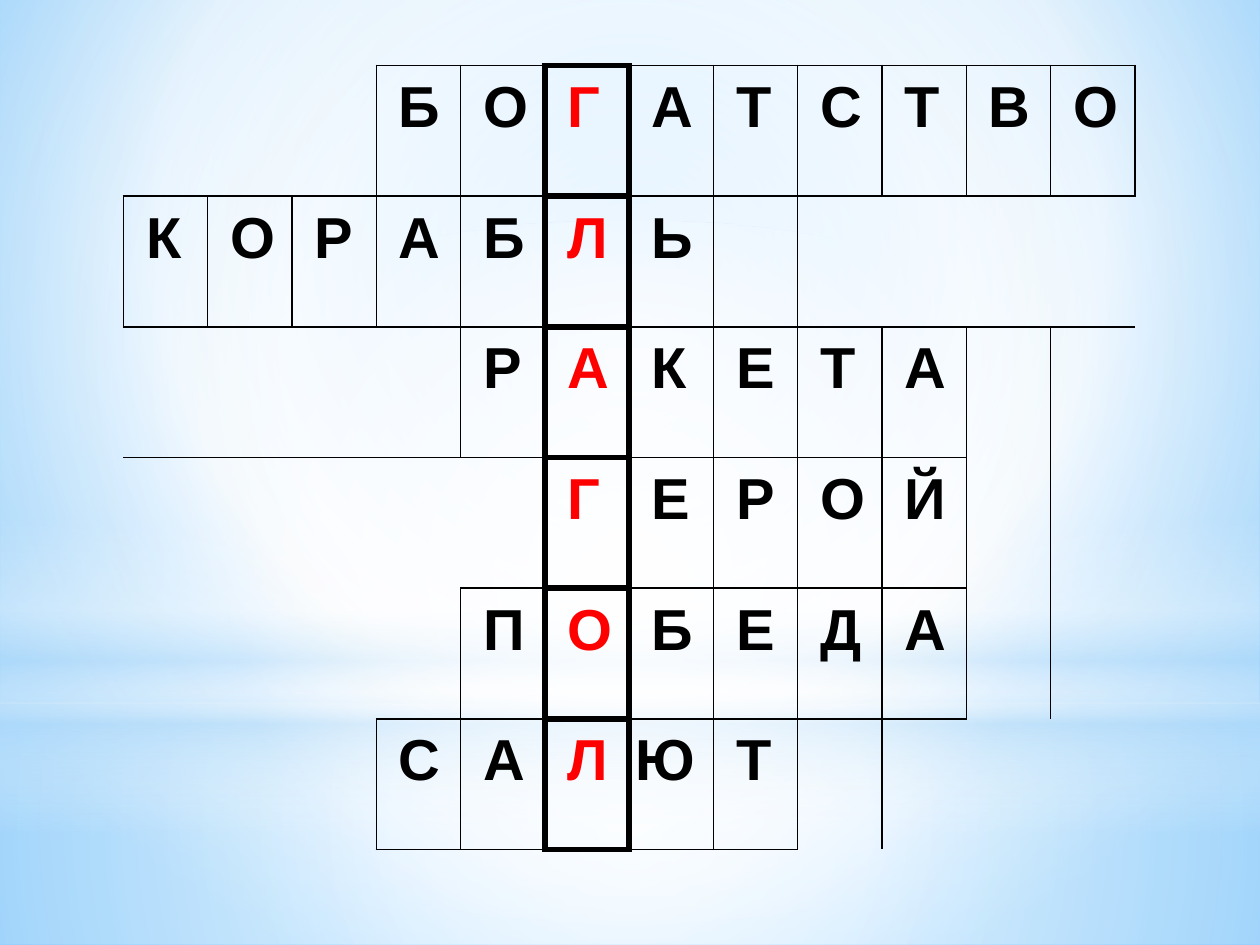
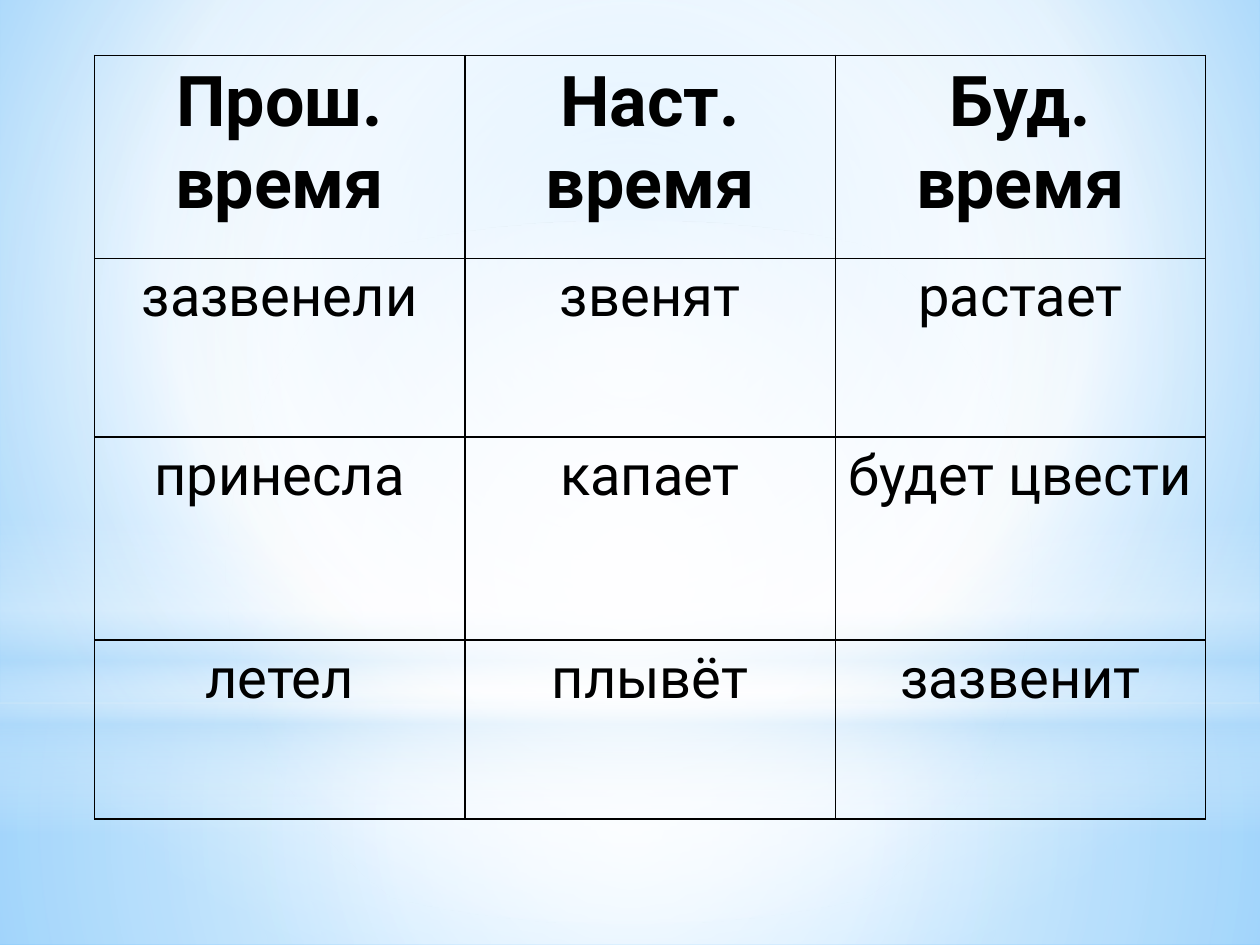
from dataclasses import dataclass
from itertools import product

from lxml.etree import SubElement
from pptx import Presentation
from pptx.dml.color import RGBColor
from pptx.enum.shapes import MSO_SHAPE
from pptx.enum.text import PP_ALIGN
from pptx.oxml.ns import qn
from pptx.util import Inches, Pt

SLIDE_WIDTH, SLIDE_HEIGHT = Inches(10), Inches(7.5)
BLACK, RED, WHITE, PALE_BLUE = "000000", "FF0000", "FFFFFF", "B4DCFA"
THIN, THICK = 1, 3.75
NO_TABLE_STYLE = "{2D5ABB26-0587-4C30-8999-92F81FD0307C}"
CENTER = (50, 50, 50, 50)

KEYWORD = "ГЛАГОЛ"
KEYWORD_COLUMN = 5
CROSSWORD_COLUMNS = 12
CROSSWORD_WORDS = ("БОГАТСТВО", "КОРАБЛЬ", "РАКЕТА", "ГЕРОЙ", "ПОБЕДА", "САЛЮТ")
WIDE_LETTER = "Ю"

TENSES = (
    ("Прош. время", "Наст. время", "Буд. время"),
    ("зазвенели", "звенят", "растает"),
    ("принесла", "капает", "будет цвести"),
    ("летел", "плывёт", "зазвенит"),
)


@dataclass(frozen=True)
class Stop:
    position: int
    color: str
    opacity: int = 100


@dataclass(frozen=True)
class Gradient:
    stops: tuple[Stop, ...]
    focus: tuple[int, int, int, int] | None = CENTER


@dataclass(frozen=True)
class Band:
    kind: MSO_SHAPE
    top: float
    height: float
    gradient: Gradient


@dataclass(frozen=True)
class Grid:
    left: float
    top: float
    column_width: float
    row_heights: tuple[float, ...]
    columns: int


BACKDROP = Gradient(
    (Stop(0, "9ED5FF"), Stop(60, WHITE), Stop(100, "5BB9FF")), (20, 10, 20, 60)
)
BANDS = (
    Band(MSO_SHAPE.RECTANGLE, 74.4, 25.6, Gradient(
        (Stop(0, WHITE, 91), Stop(37, WHITE, 76), Stop(100, PALE_BLUE, 79)))),
    Band(MSO_SHAPE.RECTANGLE, 0, 74.4, Gradient(
        (Stop(0, WHITE, 89), Stop(48, WHITE, 62), Stop(100, PALE_BLUE, 79)))),
    Band(MSO_SHAPE.RECTANGLE, 54.93, 33.33, Gradient(
        (Stop(0, WHITE, 0), Stop(29, WHITE, 30), Stop(45, PALE_BLUE, 40),
         Stop(55, WHITE, 26), Stop(65, PALE_BLUE, 60), Stop(100, WHITE, 0)), None)),
    Band(MSO_SHAPE.OVAL, 23.33, 74.4, Gradient(
        (Stop(0, WHITE), Stop(56, WHITE, 0)))),
)
CROSSWORD_GRID = Grid(9.8, 6.93, 6.69, (13.83,) * len(KEYWORD), CROSSWORD_COLUMNS)
TENSE_GRID = Grid(7.5, 5.87, 29.4, (21.47, 18.93) * 2, 3)


def across(percent: float) -> int:
    return round(SLIDE_WIDTH * percent / 100)


def down(percent: float) -> int:
    return round(SLIDE_HEIGHT * percent / 100)


def rgb(color: str) -> RGBColor:
    return RGBColor.from_string(color)


def paint_gradient(fill, owner, gradient: Gradient) -> None:
    fill.gradient()
    element = next(owner.iter(qn("a:gradFill")))
    for child in list(element):
        element.remove(child)
    stop_list = SubElement(element, qn("a:gsLst"))
    for stop in gradient.stops:
        mark = SubElement(stop_list, qn("a:gs"), pos=str(stop.position * 1000))
        color = SubElement(mark, qn("a:srgbClr"), val=stop.color)
        if stop.opacity < 100:
            SubElement(color, qn("a:alpha"), val=str(stop.opacity * 1000))
    if gradient.focus is None:
        SubElement(element, qn("a:lin"), ang="5400000", scaled="0")
    else:
        path = SubElement(element, qn("a:path"), path="circle")
        sides = {side: str(share * 1000) for side, share in zip("ltrb", gradient.focus)}
        SubElement(path, qn("a:fillToRect"), **sides)


def decorate_layout(layout, slide) -> None:
    paint_gradient(layout.background.fill, layout.element, BACKDROP)
    for band in BANDS:
        shape = slide.shapes.add_shape(
            band.kind, 0, down(band.top), SLIDE_WIDTH, down(band.height)
        )
        shape.shadow.inherit = False
        shape.line.fill.background()
        paint_gradient(shape.fill, shape.element, band.gradient)
        layout.shapes.element.append(shape.element)


def add_grid(slide, grid: Grid):
    heights = [down(height) for height in grid.row_heights]
    width = across(grid.column_width)
    frame = slide.shapes.add_table(
        len(heights), grid.columns, across(grid.left), down(grid.top),
        width * grid.columns, sum(heights),
    )
    table = frame.table
    table.first_row = table.horz_banding = False
    next(frame.element.iter(qn("a:tableStyleId"))).text = NO_TABLE_STYLE
    for column in table.columns:
        column.width = width
    for row, height in zip(table.rows, heights):
        row.height = height
    return table


def format_cell(cell, borders: dict[str, float]) -> None:
    properties = cell._tc.get_or_add_tcPr()
    for side, weight in borders.items():
        if weight:
            line = SubElement(properties, qn(f"a:ln{side}"), w=str(Pt(weight)))
            fill = SubElement(line, qn("a:solidFill"))
            SubElement(fill, qn("a:srgbClr"), val=BLACK)
    cell.fill.background()


def write_text(cell, text: str, *, size: float, font: str, color: str = BLACK,
               bold: bool = False, align: PP_ALIGN = PP_ALIGN.LEFT,
               line_spacing: float = 1.0) -> None:
    paragraph = cell.text_frame.paragraphs[0]
    paragraph.alignment = align
    paragraph.line_spacing = line_spacing
    run = paragraph.add_run()
    run.text = text
    run.font.size = Pt(size)
    run.font.name = font
    run.font.bold = bold
    run.font.color.rgb = rgb(color)


def place_letters() -> dict[tuple[int, int], str]:
    letters = {}
    for row, (word, key) in enumerate(zip(CROSSWORD_WORDS, KEYWORD)):
        start = KEYWORD_COLUMN - word.index(key)
        for offset, letter in enumerate(word):
            letters[row, start + offset] = letter
    return letters


def build_crossword(slide) -> None:
    table = add_grid(slide, CROSSWORD_GRID)
    letters = place_letters()

    def weight(place: tuple[int, int]) -> float:
        if place not in letters:
            return 0
        return THICK if place[1] == KEYWORD_COLUMN else THIN

    for row, column in product(range(len(KEYWORD)), range(CROSSWORD_COLUMNS)):
        cell = table.cell(row, column)
        neighbours = {
            "L": (row, column - 1), "R": (row, column + 1),
            "T": (row - 1, column), "B": (row + 1, column),
        }
        own = weight((row, column))
        format_cell(cell, {side: max(own, weight(place))
                           for side, place in neighbours.items()})
        if not own:
            continue
        letter = letters[row, column]
        cell.margin_left = Inches(0.05 if letter == WIDE_LETTER else 0.18)
        cell.margin_right = Inches(0.05)
        cell.margin_top = cell.margin_bottom = 0
        write_text(cell, letter, size=33, font="Arial", bold=True, line_spacing=1.15,
                   color=RED if column == KEYWORD_COLUMN else BLACK)


def build_tenses(slide) -> None:
    table = add_grid(slide, TENSE_GRID)
    for row, words in enumerate(TENSES):
        heading = row == 0
        for column, word in enumerate(words):
            cell = table.cell(row, column)
            format_cell(cell, dict.fromkeys("LRTB", THIN))
            write_text(cell, word, size=40 if heading else 32, font="Roboto",
                       bold=heading, align=PP_ALIGN.CENTER)


def main() -> None:
    presentation = Presentation()
    presentation.slide_width, presentation.slide_height = SLIDE_WIDTH, SLIDE_HEIGHT
    layout = presentation.slide_layouts[6]
    crossword_slide, tense_slide = (
        presentation.slides.add_slide(layout) for _ in range(2)
    )
    decorate_layout(layout, crossword_slide)
    build_crossword(crossword_slide)
    build_tenses(tense_slide)
    presentation.save("out.pptx")


if __name__ == "__main__":
    main()
